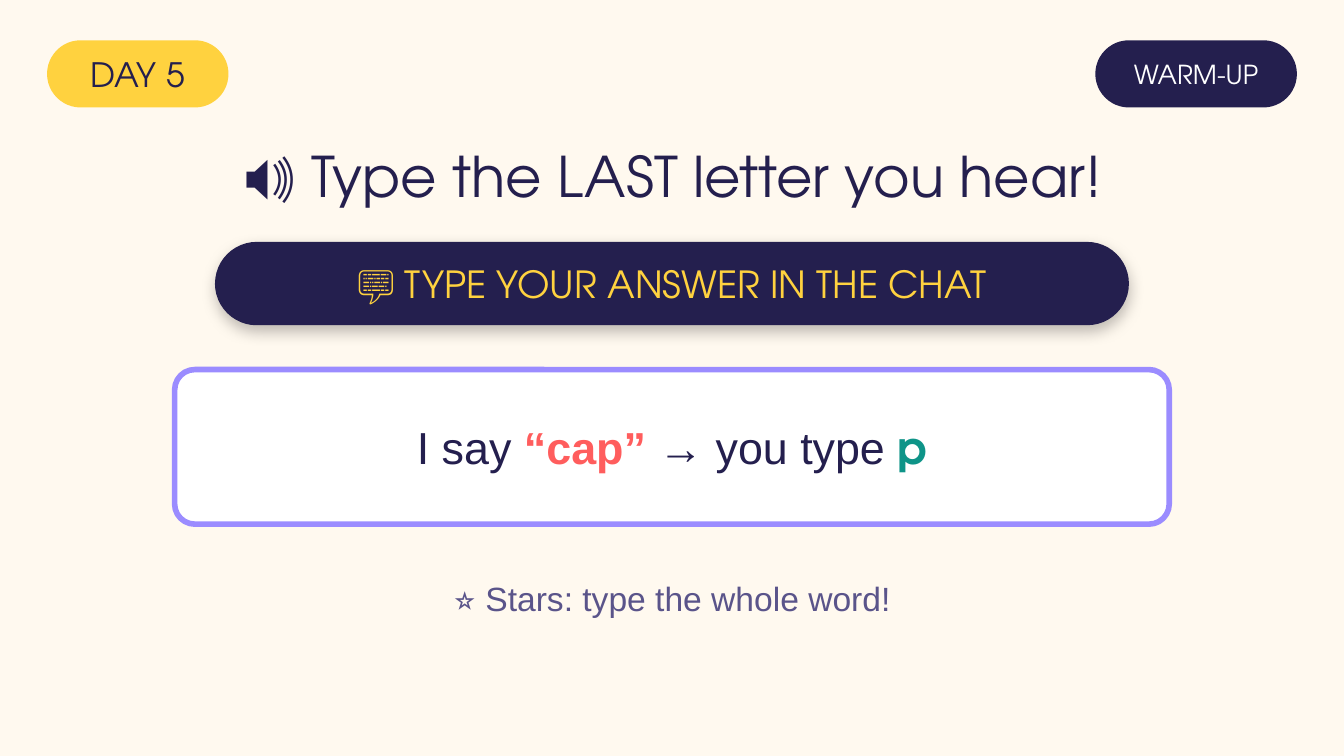
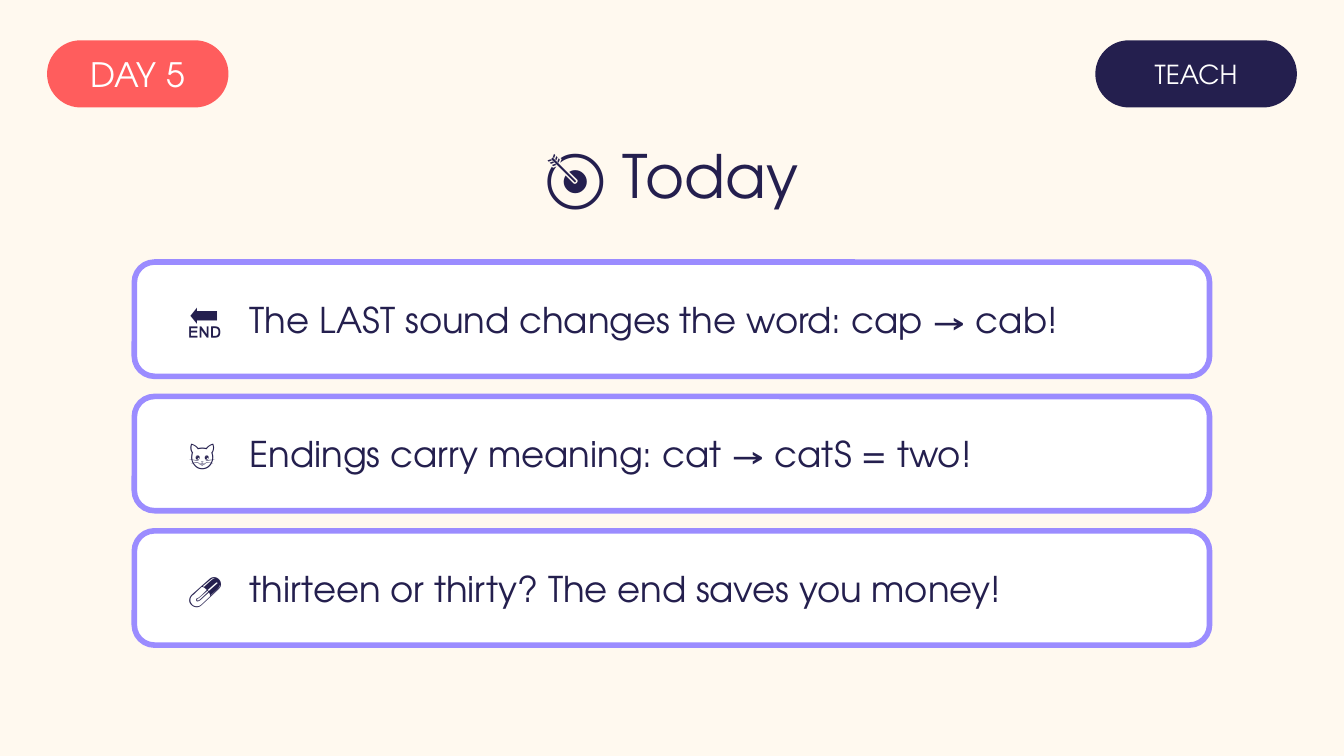
from dataclasses import dataclass

from lxml.etree import SubElement
from pptx import Presentation
from pptx.dml.color import RGBColor
from pptx.enum.shapes import MSO_SHAPE
from pptx.enum.text import MSO_ANCHOR, PP_ALIGN
from pptx.oxml.ns import qn
from pptx.util import Inches, Pt

SLIDE_WIDTH = 10
CELL = SLIDE_WIDTH / 200  # the slide is a grid of 200 columns of square cells
GAP = " "  # en space between an icon and its words


@dataclass(frozen=True)
class Theme:
    cream: str = "FFF9EF"
    navy: str = "241F4E"
    yellow: str = "FFD23F"
    coral: str = "FF5D5D"
    violet: str = "9B8CFF"
    teal: str = "0E9488"
    muted: str = "5A548A"
    white: str = "FFFFFF"
    display: str = "TeX Gyre Adventor"
    body: str = "Arial"
    title_size: int = 32
    long_title_size: int = 30
    example_size: int = 24
    chat_size: int = 20
    goal_size: int = 19
    label_size: int = 18
    tag_size: int = 14
    border: int = 3
    card_radius: int = 3


THEME = Theme()


@dataclass(frozen=True)
class Box:
    """A region measured in grid cells."""
    left: float
    top: float
    width: float
    height: float

    def within(self, left, top, width, height):
        return Box(self.left + left, self.top + top, width, height)

    def emu(self):
        return [Inches(cells * CELL)
                for cells in (self.left, self.top, self.width, self.height)]


HEADER = Box(7, 6, 186, 10)
TITLE = Box(0, 19, 200, 14)
CHAT = Box(32, 36, 136, 12.4)
EXAMPLE = Box(26, 55, 148, 23)
STARS = Box(0, 84, 200, 10)
GOALS = Box(20, 39, 160, 57)


def style(size, color=THEME.navy, name=THEME.display, bold=False):
    return {"size": Pt(size), "name": name, "bold": bold, "color": color}


def rounded(slide, box, fill, radius, border=None):
    shape = slide.shapes.add_shape(MSO_SHAPE.ROUNDED_RECTANGLE, *box.emu())
    shape.shadow.inherit = False
    shape.adjustments[0] = radius / min(box.width, box.height)
    shape.fill.solid()
    shape.fill.fore_color.rgb = RGBColor.from_string(fill)
    if border:
        shape.line.color.rgb = RGBColor.from_string(border)
        shape.line.width = Pt(THEME.border)
    else:
        shape.line.fill.background()
    return shape


def write(slide, box, runs, align=PP_ALIGN.CENTER, inset=True, tab=None):
    """Add one paragraph made of (text, style) runs, centred vertically."""
    frame = slide.shapes.add_textbox(*box.emu()).text_frame
    settings = {"word_wrap": True, "vertical_anchor": MSO_ANCHOR.MIDDLE}
    if not inset:
        settings |= {f"margin_{side}": 0
                     for side in ("left", "top", "right", "bottom")}
    for key, value in settings.items():
        setattr(frame, key, value)
    paragraph = frame.paragraphs[0]
    paragraph.alignment = align
    if tab:
        stops = SubElement(paragraph._p.get_or_add_pPr(), qn("a:tabLst"))
        SubElement(stops, qn("a:tab"), pos=str(Inches(tab * CELL)), algn="l")
    for text, formats in runs:
        run = paragraph.add_run()
        run.text = text
        for key, value in formats.items():
            if key == "color":
                run.font.color.rgb = RGBColor.from_string(value)
            else:
                setattr(run.font, key, value)


def pill(slide, box, text, fill, formats):
    capsule = rounded(slide, box, fill, box.height / 2)
    write(slide, box, [(text, formats)], inset=False)
    return capsule


def card(slide, box):
    rounded(slide, box, THEME.white, THEME.card_radius, THEME.violet)


def soft_shadow(shape):
    effects = shape._element.spPr.find(qn("a:effectLst"))
    shadow = SubElement(effects, qn("a:outerShdw"), blurRad=str(Pt(8)),
                        dist=str(Pt(3)), dir=str(90 * 60000), rotWithShape="0")
    black = SubElement(shadow, qn("a:srgbClr"), val="000000")
    SubElement(black, qn("a:alpha"), val="25000")


def header(slide, box, stage, day_fill, day_color):
    day_width, stage_width = 27, 30
    pill(slide, box.within(0, 0, day_width, box.height), "DAY 5", day_fill,
         style(THEME.label_size, day_color))
    pill(slide, box.within(box.width - stage_width, 0, stage_width, box.height),
         stage, THEME.navy, style(THEME.tag_size, THEME.white))


def title(slide, box, icon, text, size):
    write(slide, box, [(icon + GAP + text, style(size))])


def chat_prompt(slide, box):
    soft_shadow(pill(slide, box, f"💬{GAP}TYPE YOUR ANSWER IN THE CHAT",
                     THEME.navy, style(THEME.chat_size, THEME.yellow)))


def example(slide, box):
    size, body = THEME.example_size, THEME.body
    plain = style(size, name=body)
    card(slide, box)
    write(slide, box, [
        ("I say ", plain),
        ("“cap”", style(size, THEME.coral, body, True)),
        (f"{GAP}→{GAP}you type ", plain),
        ("p", style(size, THEME.teal, bold=True)),
    ])


def goal_cards(slide, box, goals):
    gap = 3
    height = (box.height - gap * (len(goals) - 1)) / len(goals)
    for index, (icon, goal) in enumerate(goals):
        row = box.within(0, index * (height + gap), box.width, height)
        card(slide, row)
        write(slide, row.within(6, 0, row.width - 8, height),
              [(f"{icon}\t{goal}", style(THEME.goal_size))],
              align=PP_ALIGN.LEFT, tab=9.2)


def new_slide(deck):
    slide = deck.slides.add_slide(deck.slide_layouts[6])
    slide.background.fill.solid()
    slide.background.fill.fore_color.rgb = RGBColor.from_string(THEME.cream)
    return slide


def warm_up_slide(deck):
    slide = new_slide(deck)
    header(slide, HEADER, "WARM-UP", THEME.yellow, THEME.navy)
    title(slide, TITLE, "🔊", "Type the LAST letter you hear!",
          THEME.long_title_size)
    chat_prompt(slide, CHAT)
    example(slide, EXAMPLE)
    write(slide, STARS, [("⭐ Stars: type the whole word!",
                          style(THEME.label_size, THEME.muted, THEME.body))])


def teach_slide(deck):
    slide = new_slide(deck)
    header(slide, HEADER, "TEACH", THEME.coral, THEME.white)
    title(slide, TITLE, "🎯", "Today", THEME.title_size)
    goal_cards(slide, GOALS, [
        ("🔚", "The LAST sound changes the word: cap → cab!"),
        ("🐱", "Endings carry meaning: cat → catS = two!"),
        ("💊", "thirteen or thirty? The end saves you money!"),
    ])


def main():
    deck = Presentation()
    deck.slide_width = Inches(SLIDE_WIDTH)
    deck.slide_height = Inches(SLIDE_WIDTH * 9 / 16)
    warm_up_slide(deck)
    teach_slide(deck)
    deck.save("out.pptx")


if __name__ == "__main__":
    main()
